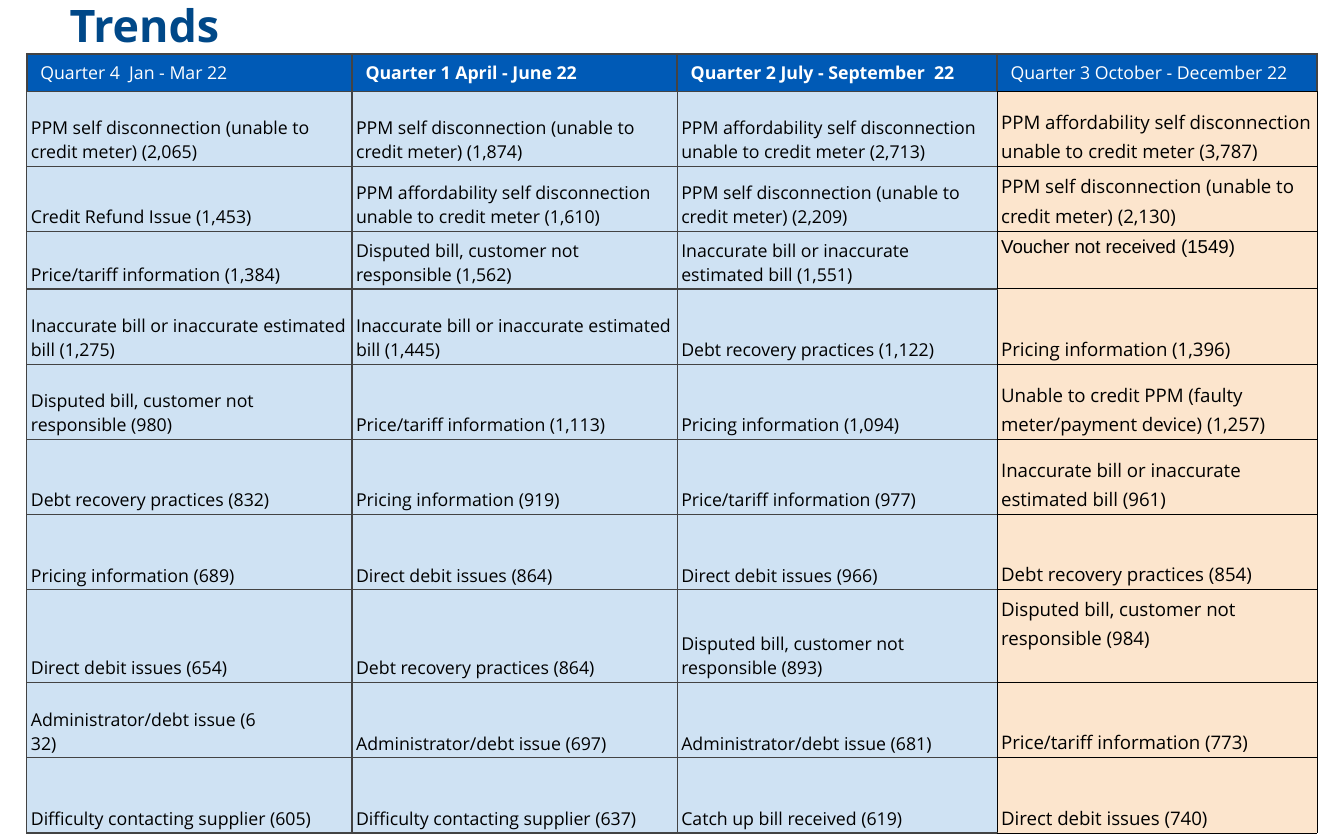
"""Build a slide with a table of complaint trends over four quarters."""
from pptx import Presentation
from pptx.dml.color import RGBColor as RGB
from pptx.enum.text import MSO_ANCHOR as Anchor
from pptx.oxml import parse_xml
from pptx.oxml.ns import nsdecls
from pptx.util import Inches, Pt


def write(para, text, size, color, bold=False, face="Open Sans"):
    run = para.add_run()
    run.text = text
    font = run.font
    font.name, font.size, font.bold = face, Pt(size), bold
    font.color.rgb = RGB.from_string(color)


def paint(cell, fill, lines):
    props = cell._tc.get_or_add_tcPr()
    for side, (color, width) in zip("LRTB", lines):
        props.append(parse_xml(
            f'<a:ln{side} {nsdecls("a")} w="{Pt(width)}"><a:solidFill>'
            f'<a:srgbClr val="{color}"/></a:solidFill></a:ln{side}>'))
    cell.fill.solid()
    cell.fill.fore_color.rgb = RGB.from_string(fill)


heads = [
    ("Quarter 4  Jan - Mar 22", False),
    ("Quarter 1 April - June 22", True),
    ("Quarter 2 July - September  22", True),
    ("Quarter 3 October - December 22", False),
]
rows = [
    ("PPM self disconnection (unable to credit meter) (2,065)",
     "PPM self disconnection (unable to credit meter) (1,874)",
     "PPM affordability self disconnection unable to credit meter (2,713)",
     "PPM affordability self disconnection unable to credit meter (3,787)"),
    ("Credit Refund Issue (1,453)",
     "PPM affordability self disconnection unable to credit meter (1,610)",
     "PPM self disconnection (unable to credit meter) (2,209)",
     "PPM self disconnection (unable to credit meter) (2,130)"),
    ("Price/tariff information (1,384)",
     "Disputed bill, customer not responsible (1,562)",
     "Inaccurate bill or inaccurate estimated bill (1,551)",
     "Voucher not received (1549)"),
    ("Inaccurate bill or inaccurate estimated bill (1,275)",
     "Inaccurate bill or inaccurate estimated bill (1,445)",
     "Debt recovery practices (1,122)",
     "Pricing information (1,396)"),
    ("Disputed bill, customer not responsible (980)",
     "Price/tariff information (1,113)",
     "Pricing information (1,094)",
     "Unable to credit PPM (faulty meter/payment device) (1,257)"),
    ("Debt recovery practices (832)",
     "Pricing information (919)",
     "Price/tariff information (977)",
     "Inaccurate bill or inaccurate estimated bill (961)"),
    ("Pricing information (689)",
     "Direct debit issues (864)",
     "Direct debit issues (966)",
     "Debt recovery practices (854)"),
    ("Direct debit issues (654)",
     "Debt recovery practices (864)",
     "Disputed bill, customer not responsible (893)",
     "Disputed bill, customer not responsible (984)"),
    ("Administrator/debt issue (6\n32)",
     "Administrator/debt issue (697)",
     "Administrator/debt issue (681)",
     "Price/tariff information (773)"),
    ("Difficulty contacting supplier (605)",
     "Difficulty contacting supplier (637)",
     "Catch up bill received (619)",
     "Direct debit issues (740)"),
]
widths = [2.42, 2.42, 2.38, 2.38]
heights = [0.28, 0.56, 0.48, 0.43] + [0.56] * 4 + [0.69, 0.56, 0.56]
high = {(3, 3), (8, 3)}
gray, thick, black = ("434343", 0.75), ("434343", 1), ("000000", 0.5)

deck = Presentation()
deck.slide_width, deck.slide_height = Inches(10), Inches(6.25)
slide = deck.slides.add_slide(deck.slide_layouts[6])

grid = slide.shapes.add_table(
    len(heights), len(widths), Inches(0.2), Inches(0.4),
    Inches(sum(widths)), Inches(sum(heights))).table
for col, width in zip(grid.columns, widths):
    col.width = Inches(width)
for row, height in zip(grid.rows, heights):
    row.height = Inches(height)

for c, (text, bold) in enumerate(heads):
    cell = grid.cell(0, c)
    cell.margin_left = cell.margin_right = Inches(0.1)
    cell.margin_top = cell.margin_bottom = Inches(0.05)
    write(cell.text_frame.paragraphs[0], text, 9.5, "FFFFFF", bold)
    paint(cell, "005AB6", [thick] * 3 + [black if c == 3 else gray])

for r, row in enumerate(rows, 1):
    for c, text in enumerate(row):
        cell = grid.cell(r, c)
        last = c == 3
        cell.margin_left = cell.margin_right = Inches(0.03)
        cell.margin_top = cell.margin_bottom = Inches(0.02)
        cell.vertical_anchor = Anchor.TOP if (r, c) in high else Anchor.BOTTOM
        frame = cell.text_frame
        for n, part in enumerate(text.split("\n")):
            para = frame.add_paragraph() if n else frame.paragraphs[0]
            if last:
                para.line_spacing = 1.15
            face = "Arial" if (r, c) == (3, 3) else "Open Sans"
            write(para, part, 10 if last else 9.5, "000000", face=face)
        lines = [black] * 4 if last else [gray, black if c == 2 else gray, gray, gray]
        paint(cell, "FCE5CD" if last else "CFE2F3", lines)

title = slide.shapes.add_textbox(Inches(0.42), Inches(-0.12), Inches(9), Inches(1.04))
frame = title.text_frame
frame.word_wrap = True
frame.margin_left = frame.margin_right = Inches(0.1)
frame.margin_top = frame.margin_bottom = Inches(0.1)
write(frame.paragraphs[0], "Trends", 24, "004888", True)

deck.save("out.pptx")
